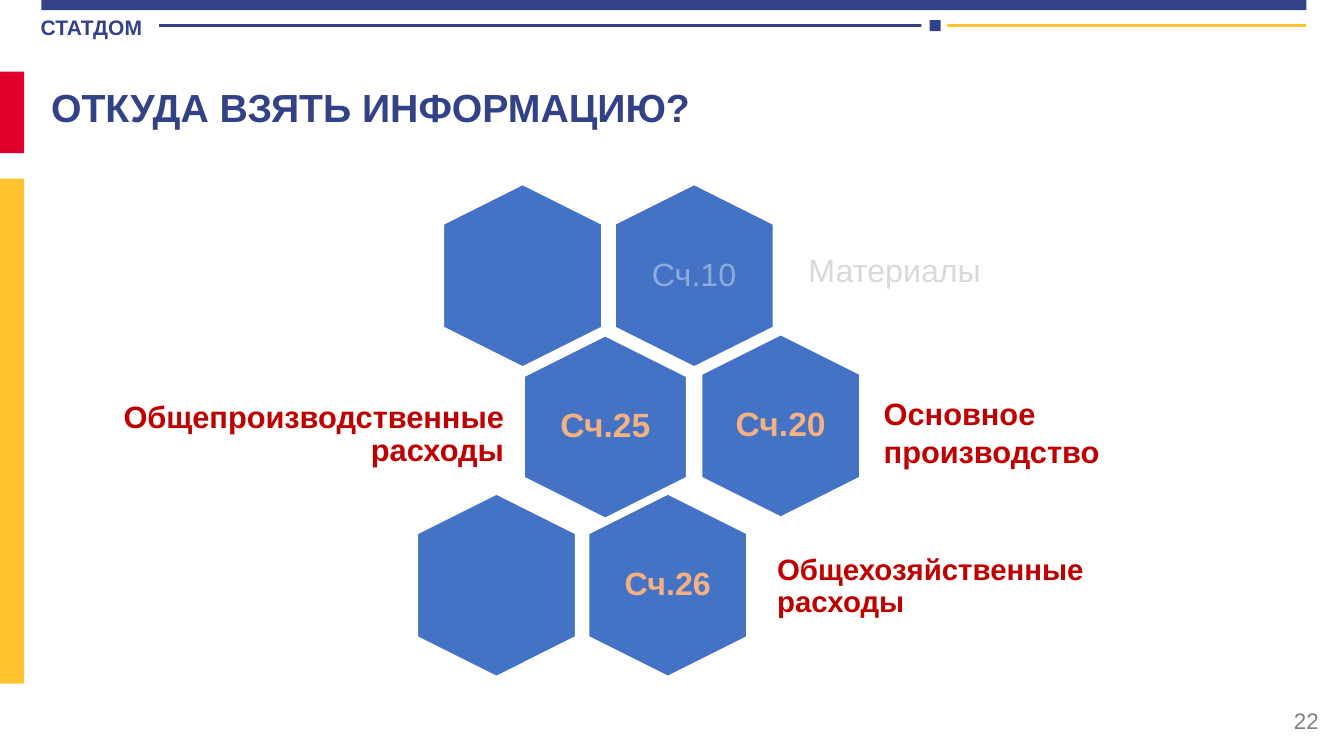
from lxml.etree import SubElement
from pptx import Presentation
from pptx.dml.color import RGBColor
from pptx.enum.shapes import MSO_CONNECTOR, MSO_SHAPE
from pptx.enum.text import MSO_ANCHOR, PP_ALIGN
from pptx.oxml.ns import qn
from pptx.util import Pt

NAVY, YELLOW, RED, BLUE = "334286", "FFC32E", "E1002B", "4472C4"
PEACH, DARK_RED = "F4B183", "C00000"
LEFT, CENTER, RIGHT = PP_ALIGN.LEFT, PP_ALIGN.CENTER, PP_ALIGN.RIGHT
TOP, MIDDLE = MSO_ANCHOR.TOP, MSO_ANCHOR.MIDDLE

# left, top, width, height, colour
BARS = [
    (29.5, 0, 903.6, 7.2, NAVY),
    (0, 51.1, 17.3, 58.3, RED),
    (0, 127.6, 17.3, 360.7, YELLOW),
]
# start, end, colour
RULES = [(113.4, 671.8, NAVY), (661.7, 932.6, YELLOW)]
RULE_Y = 18
# left, width, colour
RULE_MARKERS = [(658.1, 18.7, "FFFFFF"), (664, 7.9, NAVY)]

HEXAGON_LENGTH = 130.3
# centre x, centre y, hexagon width, label, size, colour, bold
HEXAGONS = [
    (495.8, 196.9, 113, "Сч.10", 23, "8FAADC", False),
    (373.3, 196.9, 113, "", 0, "", False),
    (432.4, 305, 116, "Сч.25", 24, PEACH, True),
    (557.6, 304.2, 113, "Сч.20", 24, PEACH, True),
    (477, 418, 113, "Сч.26", 23, PEACH, True),
    (354.6, 418, 113, "", 0, "", False),
]
# left, top, width, height, text, size, colour, bold, alignment, anchor, line spacing, inset
TEXTS = [
    (28.1, 9.4, 82.8, 23, "СТАТДОМ", 15, NAVY, True, LEFT, TOP, 1, 1),
    (29.5, 56.2, 756, 43.9, "ОТКУДА ВЗЯТЬ ИНФОРМАЦИЮ?", 28, NAVY, True, LEFT, TOP, 1, 7.2),
    (733, 500.4, 216, 28.8, "22", 16, "808080", False, RIGHT, MIDDLE, 1, 7.2),
    (566, 154.8, 222.5, 78.5, "Материалы", 23, "D9D9D9", False, LEFT, MIDDLE, 0.9, 11.5),
    (57.6, 271.4, 308.9, 78.5, "Общепроизводственные расходы", 22, DARK_RED, True,
     RIGHT, MIDDLE, 0.9, 6.5),
    (544.3, 380.2, 298.1, 78.5, "Общехозяйственные расходы", 21, DARK_RED, True,
     LEFT, MIDDLE, 0.9, 10.8),
    (624.2, 277.2, 263.5, 60.5, "Основное производство", 22, DARK_RED, True,
     LEFT, TOP, 1.04, 7.2),
]


def rgb(value):
    return RGBColor.from_string(value)


def add_filled(slide, kind, left, top, width, height, colour):
    shape = slide.shapes.add_shape(kind, Pt(left), Pt(top), Pt(width), Pt(height))
    shape.shadow.inherit = False
    shape.fill.solid()
    shape.fill.fore_color.rgb = rgb(colour)
    shape.line.fill.background()
    return shape


def add_rule(slide, start, end, colour):
    rule = slide.shapes.add_connector(
        MSO_CONNECTOR.STRAIGHT, Pt(start), Pt(RULE_Y), Pt(end), Pt(RULE_Y))
    rule.line.color.rgb = rgb(colour)
    rule.line.width = Pt(2)
    SubElement(rule._element.spPr, qn("a:effectLst"))


def add_text(slide, left, top, width, height, text, size, colour, bold,
             alignment, anchor, spacing, inset):
    box = slide.shapes.add_textbox(Pt(left), Pt(top), Pt(width), Pt(height))
    frame = box.text_frame
    frame.word_wrap = True
    frame.vertical_anchor = anchor
    frame.margin_left = frame.margin_right = Pt(inset)
    frame.margin_top = frame.margin_bottom = Pt(min(inset, 3.6))
    frame.text = text
    paragraph = frame.paragraphs[0]
    paragraph.alignment = alignment
    paragraph.line_spacing = spacing
    font = paragraph.runs[0].font
    font.name, font.size, font.bold = "Arial", Pt(size), bold
    font.color.rgb = rgb(colour)
    return box


def add_hexagon(slide, x, y, width, label, size, colour, bold):
    """Draw a hexagon standing on its point, with an upright label over it."""
    hexagon = add_filled(slide, MSO_SHAPE.HEXAGON, x - HEXAGON_LENGTH / 2,
                         y - width / 2, HEXAGON_LENGTH, width, BLUE)
    hexagon.rotation = 90
    hexagon.adjustments[0] = 0.25
    hexagon.line.color.rgb = rgb("FFFFFF")
    hexagon.line.width = Pt(1)
    if label:
        add_text(slide, x - 39, y - 45, 78, 90, label, size, colour, bold,
                 CENTER, MIDDLE, 0.9, 0)


def main():
    presentation = Presentation()
    presentation.slide_width, presentation.slide_height = Pt(960), Pt(540)
    slide = presentation.slides.add_slide(presentation.slide_layouts[6])
    for bar in BARS:
        add_filled(slide, MSO_SHAPE.RECTANGLE, *bar)
    for rule in RULES:
        add_rule(slide, *rule)
    for left, width, colour in RULE_MARKERS:
        add_filled(slide, MSO_SHAPE.RECTANGLE, left, RULE_Y - 3.6, width, 7.9, colour)
    for hexagon in HEXAGONS:
        add_hexagon(slide, *hexagon)
    for text in TEXTS:
        add_text(slide, *text)
    presentation.save("out.pptx")


if __name__ == "__main__":
    main()
